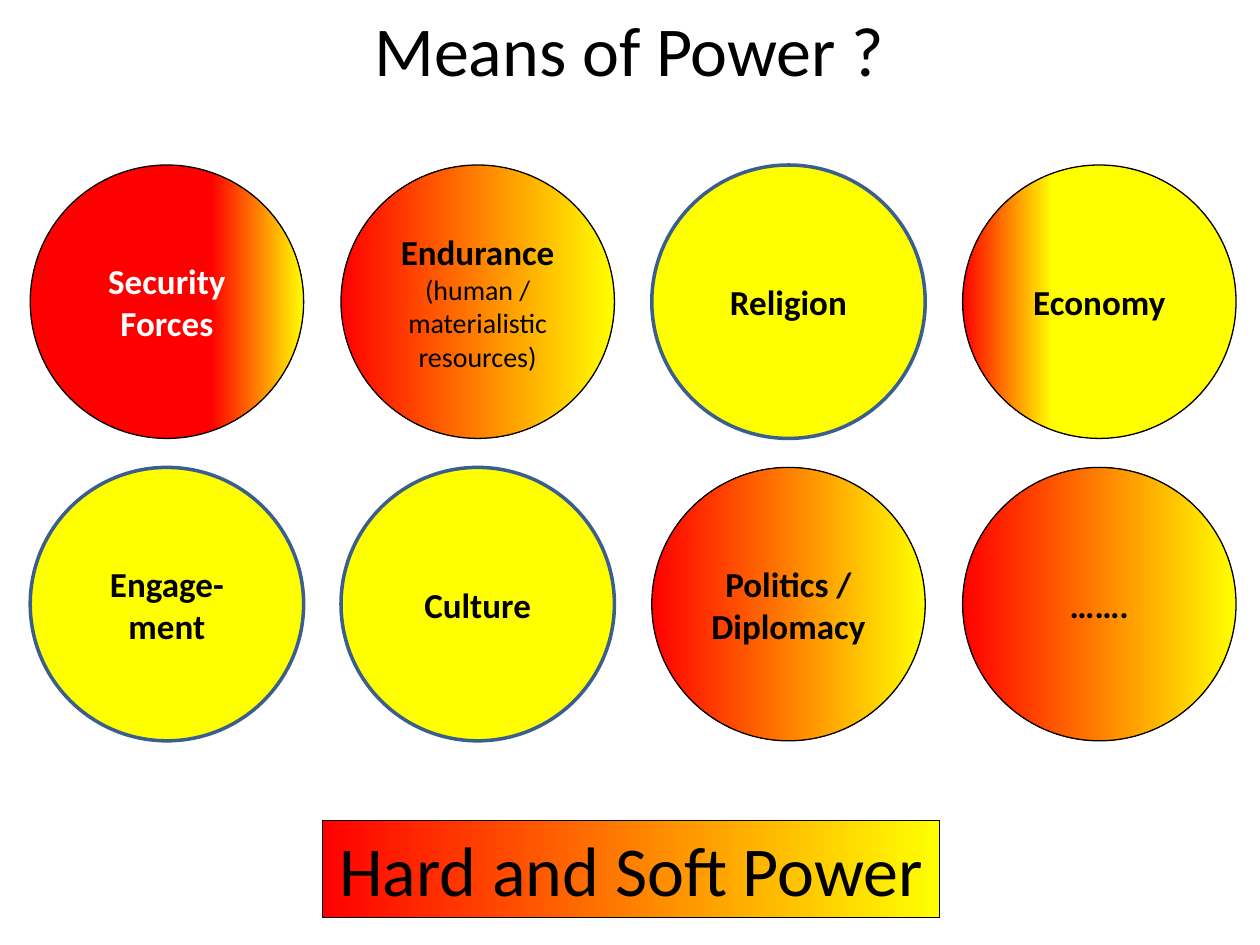
from pptx import Presentation
from pptx.dml.color import RGBColor
from pptx.enum.shapes import MSO_SHAPE
from pptx.enum.text import MSO_ANCHOR, MSO_AUTO_SIZE, PP_ALIGN
from pptx.util import Inches, Pt

OVAL, RECT = MSO_SHAPE.OVAL, MSO_SHAPE.RECTANGLE
MIDDLE, CENTER = MSO_ANCHOR.MIDDLE, PP_ALIGN.CENTER
FIT = MSO_AUTO_SIZE.SHAPE_TO_FIT_TEXT

RED = RGBColor(0xFF, 0x00, 0x00)
YELLOW = RGBColor(0xFF, 0xFF, 0x00)
BLUE = RGBColor(0x3A, 0x5F, 0x8C)
BLACK = RGBColor(0x00, 0x00, 0x00)
WHITE = RGBColor(0xFF, 0xFF, 0xFF)

FONT = "Calibri"
EVEN = (0, 1)          # red to yellow over the full width
HARD = (0.66, 1)       # mostly red
MIXED_SOFT = (0, 0.33) # mostly yellow
SOFT = None            # plain yellow

# Heading, detail, gradient stops and text colour, row by row
MEANS = [
    [("Security Forces", "", HARD, WHITE),
     ("Endurance", "(human / materialistic resources)", EVEN, BLACK),
     ("Religion", "", SOFT, BLACK),
     ("Economy", "", MIXED_SOFT, BLACK)],
    [("Engage-ment", "", SOFT, BLACK),
     ("Culture", "", SOFT, BLACK),
     ("Politics / Diplomacy", "", EVEN, BLACK),
     ("…….", "", EVEN, BLACK)],
]


def write(tf, lines, color, wrap=True):
    """Fill a text frame with centred (text, size, bold) lines."""
    tf.word_wrap = wrap
    tf.vertical_anchor = MIDDLE
    for i, (text, size, bold) in enumerate(lines):
        p = tf.add_paragraph() if i else tf.paragraphs[0]
        p.text = text
        p.alignment = CENTER
        p.font.name, p.font.size, p.font.bold = FONT, Pt(size), bold
        p.font.color.rgb = color


def add_power_shape(slide, kind, x, y, w, h, stops):
    s = slide.shapes.add_shape(kind, Inches(x), Inches(y), Inches(w), Inches(h))
    s.shadow.inherit = False
    if stops:
        s.fill.gradient()
        s.fill.gradient_angle = 0
        for stop, position, color in zip(s.fill.gradient_stops, stops, (RED, YELLOW)):
            stop.position = position
            stop.color.rgb = color
    else:
        s.fill.solid()
        s.fill.fore_color.rgb = YELLOW
    s.line.color.rgb = BLACK if stops else BLUE
    s.line.width = Pt(0.75 if stops else 2)
    return s


def add_title(slide, x, y, w, h):
    tf = slide.shapes.add_textbox(Inches(x), Inches(y), Inches(w), Inches(h)).text_frame
    write(tf, [("Means of Power ?", 40, False)], BLACK, wrap=False)
    tf.auto_size = FIT


def add_means_grid(slide, x, y, w, h, size):
    """Spread the circles evenly so that they fill the given box."""
    step_x = (w - size) / (len(MEANS[0]) - 1)
    step_y = (h - size) / (len(MEANS) - 1)
    for row, means in enumerate(MEANS):
        for col, (heading, detail, stops, color) in enumerate(means):
            s = add_power_shape(slide, OVAL, x + col * step_x, y + row * step_y,
                                size, size, stops)
            lines = [(heading, 20, True)]
            if detail:
                lines.append((detail, 16, False))
            write(s.text_frame, lines, color)


def add_banner(slide, x, y, w, h):
    s = add_power_shape(slide, RECT, x, y, w, h, EVEN)
    write(s.text_frame, [("Hard and Soft Power", 40, False)], BLACK, wrap=False)
    s.text_frame.auto_size = FIT


def main():
    prs = Presentation()
    prs.slide_width, prs.slide_height = Inches(10), Inches(7.5)
    slide = prs.slides.add_slide(prs.slide_layouts[6])
    add_title(slide, 2.85, 0, 4.29, 0.77)
    add_means_grid(slide, 0.24, 1.31, 9.57, 4.57, size=2.17)
    add_banner(slide, 2.56, 6.51, 4.9, 0.77)
    prs.save("out.pptx")


if __name__ == "__main__":
    main()
